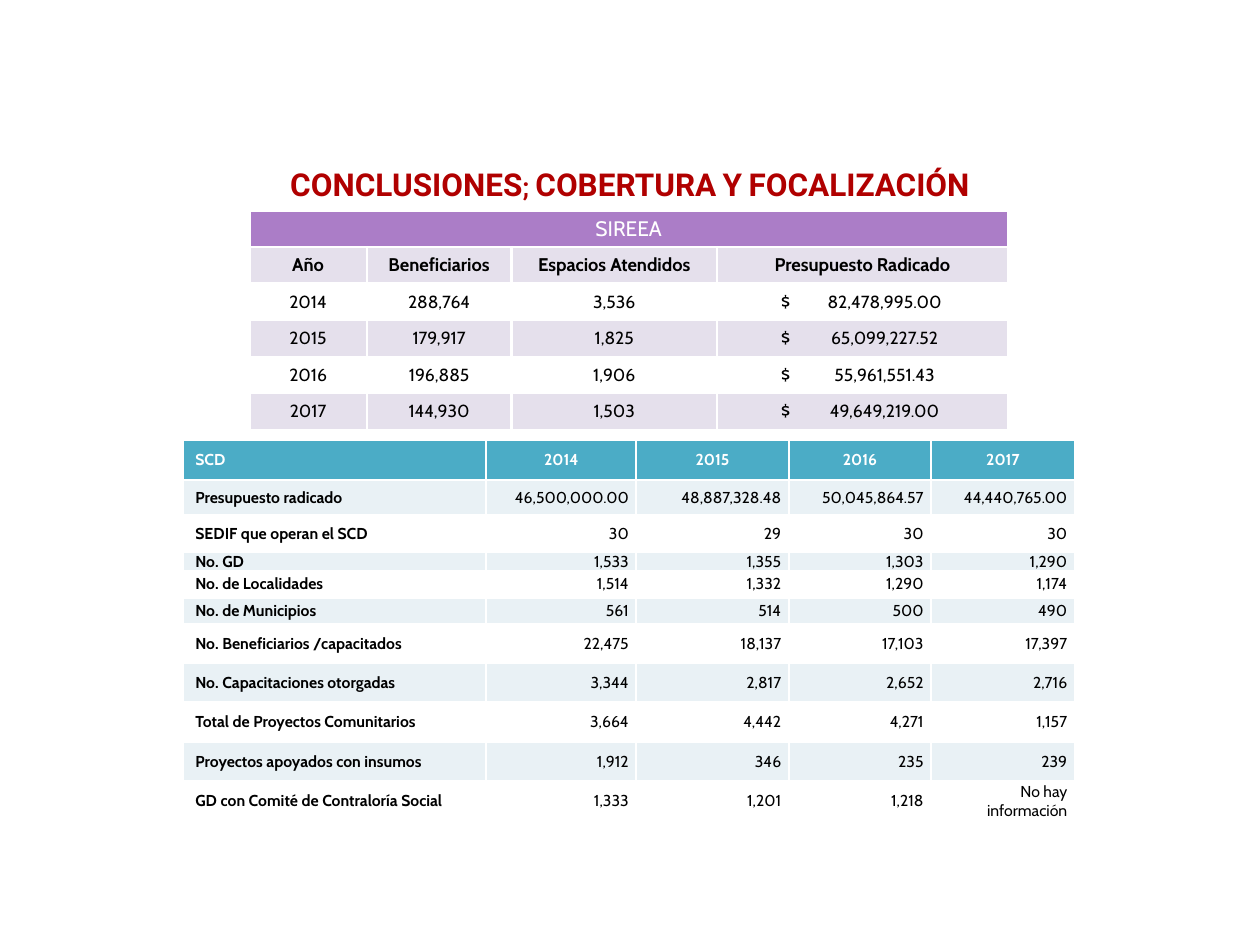
from dataclasses import dataclass

from lxml import etree
from pptx import Presentation, util as u
from pptx.dml.color import RGBColor
from pptx.enum import text
from pptx.oxml.ns import qn

WIDTH, HEIGHT = u.Inches(10), u.Inches(7.5)
LEFT, CENTER, RIGHT = text.PP_ALIGN.LEFT, text.PP_ALIGN.CENTER, text.PP_ALIGN.RIGHT


@dataclass(frozen=True)
class Theme:
    body_font: str = "Cabin"
    title_font: str = "Roboto"
    title: str = "B00000"
    ink: str = "000000"
    white: str = "FFFFFF"
    purple: str = "AB7DC7"
    violet: str = "8064A2"
    teal: str = "4BACC6"
    mist: str = "E9F1F5"
    title_size: float = 18
    program_size: float = 12
    heading_size: float = 10.5
    figure_size: float = 10
    small_size: float = 9


THEME = Theme()


@dataclass(frozen=True)
class CellStyle:
    """Look of one cell; opacity is a percentage, insets are inches."""
    size: float
    fill: str | None = None
    opacity: int = 100
    color: str = THEME.ink
    bold: bool = False
    align: text.PP_ALIGN = CENTER
    inset: float = 0.07
    left_inset: float | None = None
    center_tab: float | None = None


@dataclass(frozen=True)
class Grid:
    """Position, columns and rows as percentages of the slide."""
    left: float
    top: float
    columns: list[float]
    rows: list[float]


def across(percent: float) -> int:
    return round(WIDTH * percent / 100)


def down(percent: float) -> int:
    return round(HEIGHT * percent / 100)


def set_font(paragraph, name: str, size: float, color: str, bold: bool) -> None:
    font = paragraph.font
    font.name, font.size, font.bold = name, u.Pt(size), bold
    font.color.rgb = RGBColor.from_string(color)


def add_borders(properties) -> None:
    """Put white rules on all four sides, ahead of the cell fill."""
    for index, side in enumerate(("lnL", "lnR", "lnT", "lnB")):
        rule = etree.Element(qn(f"a:{side}"), w=str(u.Pt(1.5)))
        solid = etree.SubElement(rule, qn("a:solidFill"))
        etree.SubElement(solid, qn("a:srgbClr"), val=THEME.white)
        properties.insert(index, rule)


def fill_cell(cell, style: CellStyle) -> None:
    if style.fill is None:
        cell.fill.background()
    else:
        cell.fill.solid()
        cell.fill.fore_color.rgb = RGBColor.from_string(style.fill)
    properties = cell._tc.get_or_add_tcPr()
    if style.opacity < 100:
        color = properties.find(".//" + qn("a:srgbClr"))
        etree.SubElement(color, qn("a:alpha"), val=str(style.opacity * 1000))
    add_borders(properties)


def draw_cell(cell, words: str, style: CellStyle) -> None:
    cell.vertical_anchor = text.MSO_ANCHOR.MIDDLE
    cell.margin_left = u.Inches(style.left_inset or style.inset)
    cell.margin_right = u.Inches(style.inset)
    cell.margin_top = cell.margin_bottom = 0
    cell.text = words
    paragraph = cell.text_frame.paragraphs[0]
    paragraph.alignment = style.align
    if style.center_tab:
        stops = etree.SubElement(paragraph._p.get_or_add_pPr(), qn("a:tabLst"))
        etree.SubElement(stops, qn("a:tab"), pos=str(u.Inches(style.center_tab)), algn="ctr")
    set_font(paragraph, THEME.body_font, style.size, style.color, style.bold)
    fill_cell(cell, style)


def add_grid(slide, grid: Grid):
    frame = slide.shapes.add_table(
        len(grid.rows), len(grid.columns), across(grid.left), down(grid.top),
        across(sum(grid.columns)), down(sum(grid.rows)))
    table = frame.table
    table.first_row = table.horz_banding = False
    for column, share in zip(table.columns, grid.columns):
        column.width = across(share)
    for row, share in zip(table.rows, grid.rows):
        row.height = down(share)
    return table


SIREEA_GRID = Grid(19.8, 22.27, [9.3, 11.5, 16.3, 23.1], [3.87] * 6)
SIREEA_HEADINGS = ["Año", "Beneficiarios", "Espacios Atendidos", "Presupuesto Radicado"]
SIREEA_YEARS = [
    ["2014", "288,764", "3,536", "$\t82,478,995.00"],
    ["2015", "179,917", "1,825", "$\t65,099,227.52"],
    ["2016", "196,885", "1,906", "$\t55,961,551.43"],
    ["2017", "144,930", "1,503", "$\t49,649,219.00"],
]

SCD_GRID = Grid(14.5, 46.53, [24.1, 11.9, 12.1, 11.3, 11.4],
                [4.27, 3.73, 3.87, 2, 2.8, 2.8] + [4.17] * 5)
SCD_ROWS = [
    ["SCD", "2014", "2015", "2016", "2017"],
    ["Presupuesto radicado", "46,500,000.00", "48,887,328.48", "50,045,864.57", "44,440,765.00"],
    ["SEDIF que operan el SCD", "30", "29", "30", "30"],
    ["No. GD", "1,533", "1,355", "1,303", "1,290"],
    ["No. de Localidades", "1,514", "1,332", "1,290", "1,174"],
    ["No. de Municipios", "561", "514", "500", "490"],
    ["No. Beneficiarios /capacitados", "22,475", "18,137", "17,103", "17,397"],
    ["No. Capacitaciones otorgadas", "3,344", "2,817", "2,652", "2,716"],
    ["Total de Proyectos Comunitarios", "3,664", "4,442", "4,271", "1,157"],
    ["Proyectos apoyados con insumos", "1,912", "346", "235", "239"],
    ["GD con Comité de Contraloría Social", "1,333", "1,201", "1,218", "No hay información"],
]


def draw_sireea(slide) -> None:
    table = add_grid(slide, SIREEA_GRID)
    program = CellStyle(THEME.program_size, THEME.purple, color=THEME.white)
    for column, words in enumerate(["SIREEA", "", "", ""]):
        draw_cell(table.cell(0, column), words, program)
    table.cell(0, 0).merge(table.cell(0, 3))
    for row, values in enumerate([SIREEA_HEADINGS, *SIREEA_YEARS], start=1):
        heading = row == 1
        band = {"fill": THEME.violet, "opacity": 20} if row % 2 else {}
        size = THEME.heading_size if heading else THEME.figure_size
        for column, words in enumerate(values):
            budget = {}
            if column == 3 and not heading:
                budget = {"align": LEFT, "left_inset": 0.51, "center_tab": 0.82}
            draw_cell(table.cell(row, column), words,
                      CellStyle(size, bold=heading, **band, **budget))


def draw_scd(slide) -> None:
    table = add_grid(slide, SCD_GRID)
    for row, values in enumerate(SCD_ROWS):
        heading = row == 0
        fill = THEME.teal if heading else THEME.mist if row % 2 else THEME.white
        for column, words in enumerate(values):
            label = column == 0
            draw_cell(table.cell(row, column), words, CellStyle(
                THEME.small_size, fill,
                color=THEME.white if heading else THEME.ink,
                bold=heading or label,
                align=LEFT if label else CENTER if heading else RIGHT,
                inset=0.06, left_inset=0.1 if label else None))


def draw_title(slide) -> None:
    title = slide.shapes.add_textbox(across(8.3), down(15.2), across(83.4), down(6.67))
    title.text_frame.word_wrap = True
    paragraph = title.text_frame.paragraphs[0]
    paragraph.alignment, paragraph.line_spacing = CENTER, 1.4
    run = paragraph.add_run()
    run.text = "CONCLUSIONES; COBERTURA Y FOCALIZACIÓN"
    run._r.get_or_add_rPr().set("cap", "small")
    set_font(paragraph, THEME.title_font, THEME.title_size, THEME.title, True)


def main() -> None:
    deck = Presentation()
    deck.slide_width, deck.slide_height = WIDTH, HEIGHT
    slide = deck.slides.add_slide(deck.slide_layouts[6])
    draw_sireea(slide)
    draw_scd(slide)
    draw_title(slide)
    deck.save("out.pptx")


if __name__ == "__main__":
    main()
